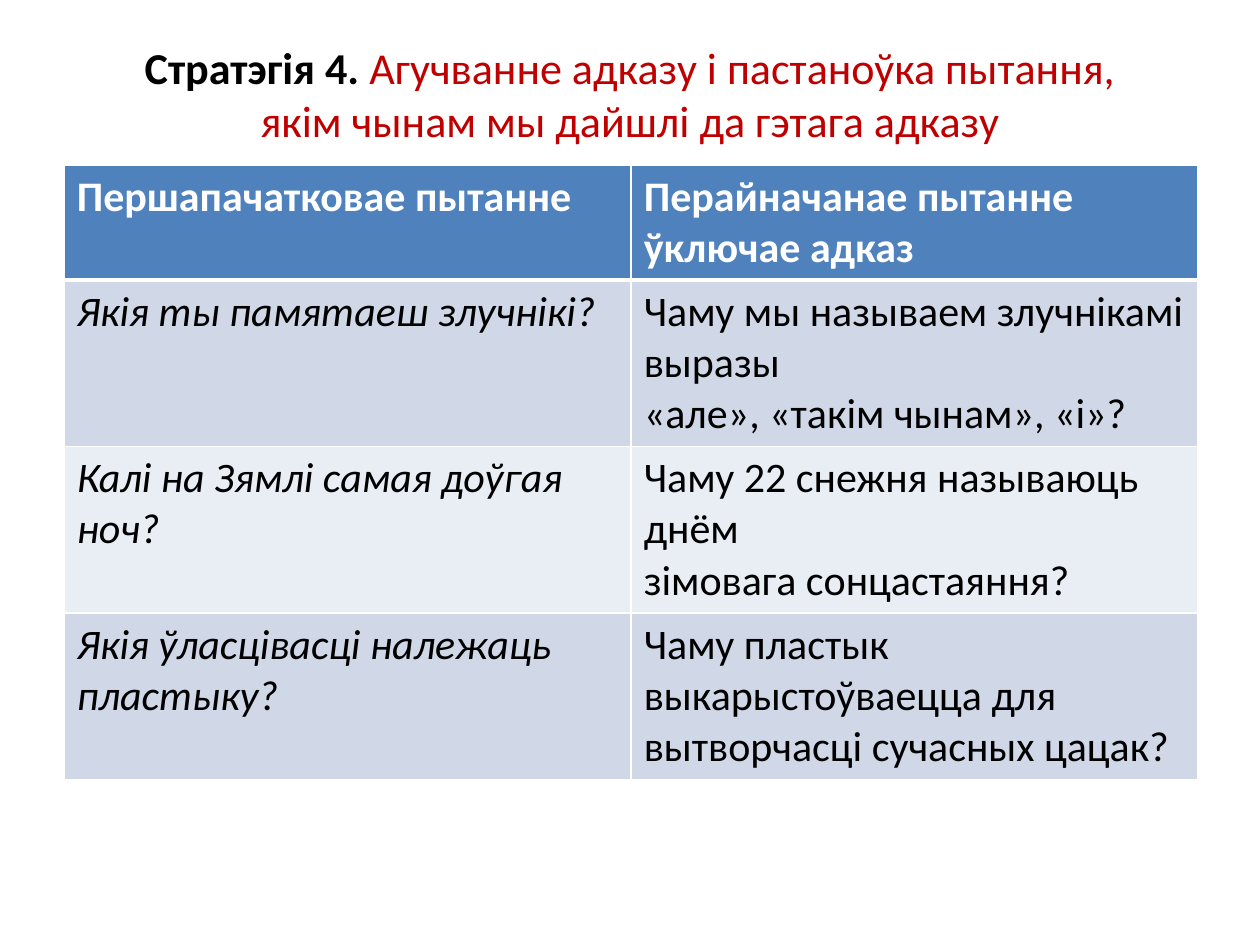
"""Build a slide with a table of original and transformed questions."""
from lxml import etree
from pptx import Presentation
from pptx import util as u
from pptx.dml.color import RGBColor
from pptx.enum import text
from pptx.oxml.ns import qn


def add_run(paragraph, words, size, color, bold=False, italic=False):
    run = paragraph.add_run()
    run.text = words
    font = run.font
    font.name, font.size = "Calibri", u.Pt(size)
    font.bold, font.italic = bold, italic
    font.color.rgb = RGBColor.from_string(color)


def add_border(cell, side, points, color):
    line = etree.SubElement(cell._tc.get_or_add_tcPr(), qn(f"a:ln{side}"), w=str(u.Pt(points)))
    fill = etree.SubElement(line, qn("a:solidFill"))
    etree.SubElement(fill, qn("a:srgbClr"), val=color)


deck = Presentation()
deck.slide_width, deck.slide_height = u.Inches(10), u.Inches(7.5)
slide = deck.slides.add_slide(deck.slide_layouts[5])

title = slide.shapes.title
title.left, title.top = u.Inches(0.5), u.Inches(0.3)
title.width, title.height = u.Inches(9), u.Inches(1.25)
heading = title.text_frame
heading.word_wrap = True
heading.auto_size = text.MSO_AUTO_SIZE.NONE
heading.vertical_anchor = text.MSO_ANCHOR.TOP
heading.margin_top = u.Inches(0.02)
strategy = heading.paragraphs[0]
strategy.alignment = text.PP_ALIGN.CENTER
add_run(strategy, "Стратэгія 4. ", 25.2, "000000", bold=True)
add_run(strategy, "Агучванне адказу і пастаноўка пытання,", 25.2, "C00000")
strategy.add_line_break()
add_run(strategy, "якім чынам мы дайшлі да гэтага адказу", 25.2, "C00000")

questions = [
    (["Першапачатковае пытанне"], ["Перайначанае пытанне ўключае адказ"]),
    (["Якія ты памятаеш злучнікі?"],
     ["Чаму мы называем злучнікамі выразы", "«але», «такім чынам», «і»?"]),
    (["Калі на Зямлі самая доўгая ноч?"],
     ["Чаму 22 снежня называюць днём", "зімовага сонцастаяння?"]),
    (["Якія ўласцівасці належаць", "пластыку?"],
     ["Чаму пластык выкарыстоўваецца для", "вытворчасці сучасных цацак?"]),
]
row_fills = ["4F81BD", "D0D8E8", "E9EDF4", "D0D8E8"]
row_heights = [0.9, 1.32, 1.32, 1.32]

table = slide.shapes.add_table(
    len(questions), 2, u.Inches(0.51), u.Inches(1.31), u.Inches(9), u.Inches(sum(row_heights))
).table
for row, (pair, row_fill, height) in enumerate(zip(questions, row_fills, row_heights)):
    table.rows[row].height = u.Inches(height)
    header = row == 0
    for column, lines in enumerate(pair):
        cell = table.cell(row, column)
        for side in "LRTB":
            thick = (header and side == "B") or (row == 1 and side == "T")
            add_border(cell, side, 3 if thick else 1, "FFFFFF")
        cell.fill.solid()
        cell.fill.fore_color.rgb = RGBColor.from_string(row_fill)
        for index, words in enumerate(lines):
            frame = cell.text_frame
            paragraph = frame.add_paragraph() if index else frame.paragraphs[0]
            add_run(paragraph, words, 24, "FFFFFF" if header else "000000",
                    bold=header, italic=not header and column == 0)

deck.save("out.pptx")
